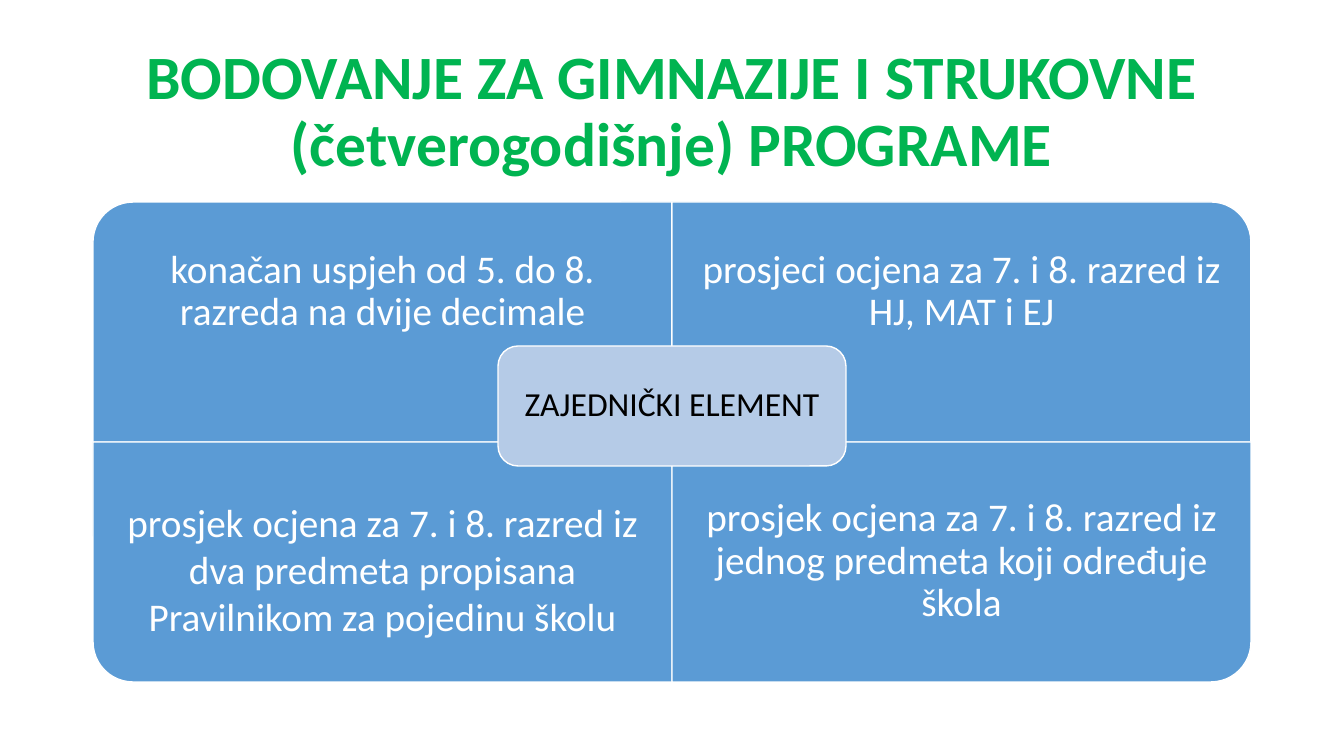
from pptx import Presentation
from pptx.dml.color import RGBColor
from pptx.enum.shapes import MSO_SHAPE as Shape
from pptx.enum.text import MSO_ANCHOR as Anchor, PP_ALIGN as Align
from pptx.util import Emu, Pt

# Content
TITLE = "BODOVANJE ZA GIMNAZIJE I STRUKOVNE (četverogodišnje) PROGRAME"
CENTER = "ZAJEDNIČKI ELEMENT"
# column, row, rotation, line spacing, text
QUADRANTS = [
    (0, 0, 270, 0.9, "konačan uspjeh od 5. do 8. razreda na dvije decimale"),
    (1, 0, 0, 0.9, "prosjeci ocjena za 7. i 8. razred iz HJ, MAT i EJ"),
    (0, 1, 180, 1.0, "prosjek ocjena za 7. i 8. razred iz dva predmeta "
                     "propisana Pravilnikom za pojedinu školu"),
    (1, 1, 90, 0.9, "prosjek ocjena za 7. i 8. razred iz jednog predmeta "
                    "koji određuje škola"),
]
GREEN, BLUE, PALE, WHITE, BLACK = "00B451", "5B9BD5", "B5CBE7", "FFFFFF", "000000"

# Layout in px
PX_PER_INCH = 100.8
LEFT, TOP, CELL_W, CELL_H = 93, 202, 579, 240
TEXT_H = CELL_H * 3 // 4
LOWER_TEXT_TOP = 498
CENTER_W, CENTER_H, CENTER_TOP = 348, 120, 346


def px(length):
    return Emu(round(length * 914400 / PX_PER_INCH))


def color(value):
    return RGBColor.from_string(value)


def write(box, text, size, ink, bold=False, spacing=0.9, anchor=Anchor.MIDDLE,
          side=10, edge=10):
    frame = box.text_frame
    frame.word_wrap = True
    frame.vertical_anchor = anchor
    frame.margin_left = frame.margin_right = px(side)
    frame.margin_top = frame.margin_bottom = px(edge)
    para = frame.paragraphs[0]
    para.alignment = Align.CENTER
    para.line_spacing = spacing
    para.space_before = Pt(0)
    span = para.add_run()
    span.text = text
    span.font.name = "Calibri"
    span.font.size = Pt(size)
    span.font.bold = bold
    span.font.color.rgb = color(ink)


def add_panel(page, kind, left, top, width, height, fill):
    panel = page.shapes.add_shape(kind, px(left), px(top), px(width), px(height))
    panel.shadow.inherit = False
    panel.fill.solid()
    panel.fill.fore_color.rgb = color(fill)
    panel.line.color.rgb = color(WHITE)
    panel.line.width = Pt(1)
    return panel


deck = Presentation()
deck.slide_width, deck.slide_height = px(1344), px(756)
page = deck.slides.add_slide(deck.slide_layouts[5])

# Title
title = page.shapes.title
title.left, title.top, title.width, title.height = px(LEFT), px(40), px(2 * CELL_W), px(146)
write(title, TITLE, 44, GREEN, bold=True, edge=5)

# Quadrants, each turned so that its round corner points outward
for column, row, rotation, spacing, text in QUADRANTS:
    left, top = LEFT + column * CELL_W, TOP + row * CELL_H
    width, height = (CELL_H, CELL_W) if rotation % 180 else (CELL_W, CELL_H)
    panel = add_panel(page, Shape.ROUND_1_RECTANGLE, left + (CELL_W - width) / 2,
                      top + (CELL_H - height) / 2, width, height, BLUE)
    panel.rotation = rotation
    text_top = LOWER_TEXT_TOP if row else top
    label = page.shapes.add_textbox(px(left), px(text_top), px(CELL_W), px(TEXT_H))
    write(label, text, 28, WHITE, spacing=spacing, side=22, edge=0,
          anchor=Anchor.TOP if row else Anchor.MIDDLE)

# Common element in the middle
center = add_panel(page, Shape.ROUNDED_RECTANGLE, LEFT + CELL_W - CENTER_W / 2,
                   CENTER_TOP, CENTER_W, CENTER_H, PALE)
write(center, CENTER, 24, BLACK)

deck.save("out.pptx")
